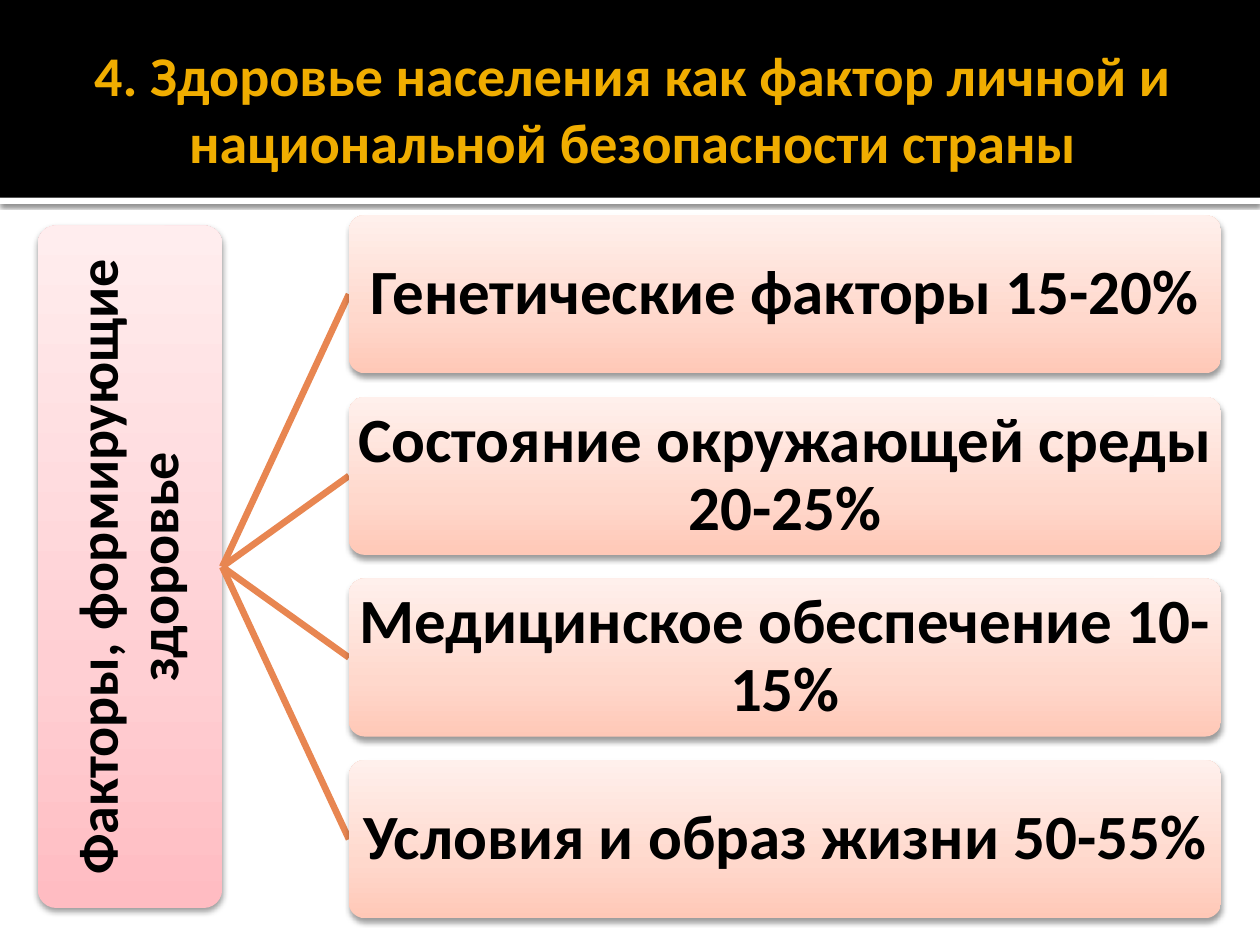
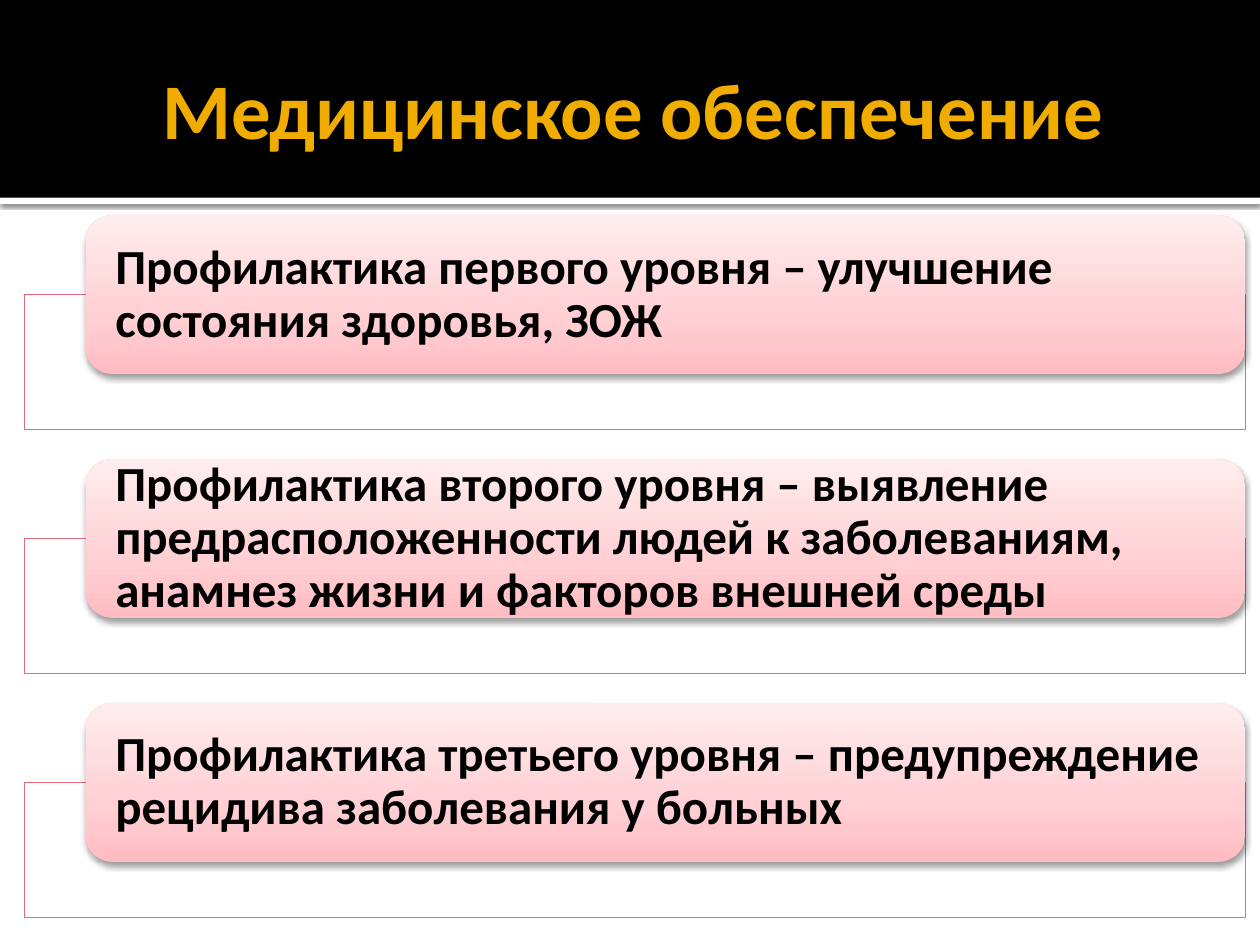
from dataclasses import dataclass

from lxml.etree import SubElement
from pptx import Presentation
from pptx.dml.color import RGBColor
from pptx.enum.shapes import MSO_CONNECTOR, MSO_SHAPE
from pptx.enum.text import MSO_ANCHOR, PP_ALIGN
from pptx.oxml.ns import qn
from pptx.util import Pt


@dataclass(frozen=True)
class Theme:
    font: str = "Calibri"
    band: str = "000000"
    paper: str = "FFFFFF"
    title: str = "F0AD00"
    text: str = "000000"
    line: str = "E88651"
    frame: str = "E66C7D"
    # Gradient stops from bottom to top: (percent, colour)
    pink: tuple = ((0, "FFBCC2"), (35, "FFCFD3"), (100, "FFEDEE"))
    peach: tuple = ((0, "FFC8B7"), (35, "FFD8CC"), (100, "FFF0EC"))
    # Shadows: (opacity percent, blur, distance)
    card_shadow: tuple = (38, 3.5, 2)
    strip_shadow: tuple = (60, 2.5, 0.8)
    title_size: int = 32
    big_title_size: int = 45
    hub_size: int = 32
    factor_size: int = 36
    level_size: int = 28


T = Theme()
WIDTH, HEIGHT = 720, 540
BAND_HEIGHT = 113

FACTORS = (
    "Генетические факторы 15-20%",
    "Состояние окружающей среды 20-25%",
    "Медицинское обеспечение 10-15%",
    "Условия и образ жизни 50-55%",
)
LEVELS = (
    "Профилактика первого уровня – улучшение состояния здоровья, ЗОЖ",
    "Профилактика второго уровня – выявление предрасположенности людей "
    "к заболеваниям, анамнез жизни и факторов внешней среды",
    "Профилактика третьего уровня – предупреждение рецидива заболевания у больных",
)


def rgb(colour):
    return RGBColor.from_string(colour)


# Fills and effects
def add_alpha(colour_node, percent):
    SubElement(colour_node, qn("a:alpha"), val=str(percent * 1000))


def set_gradient(sp, stops):
    sp.fill.gradient()
    sp.fill.gradient_angle = 90
    gs_list = sp._element.spPr.find(".//" + qn("a:gsLst"))
    for gs in list(gs_list):
        gs_list.remove(gs)
    for percent, colour in stops:
        gs = SubElement(gs_list, qn("a:gs"), pos=str(percent * 1000))
        SubElement(gs, qn("a:srgbClr"), val=colour)


def set_shadow(sp, shadow):
    opacity, blur, distance = shadow
    effects = sp._element.spPr.find(qn("a:effectLst"))
    outer = SubElement(effects, qn("a:outerShdw"), blurRad=str(Pt(blur)),
                       dist=str(Pt(distance)), dir="5400000", rotWithShape="0")
    add_alpha(SubElement(outer, qn("a:srgbClr"), val="000000"), opacity)


# Elements
def add_box(s, kind, left, top, width, height):
    sp = s.shapes.add_shape(kind, Pt(left), Pt(top), Pt(width), Pt(height))
    sp.shadow.inherit = False
    sp.line.fill.background()
    return sp


def add_rect(s, left, top, width, height, colour):
    sp = add_box(s, MSO_SHAPE.RECTANGLE, left, top, width, height)
    sp.fill.solid()
    sp.fill.fore_color.rgb = rgb(colour)
    return sp


def write(sp, text, size, colour, align=PP_ALIGN.CENTER, insets=(0, 0, 0, 0), spacing=None):
    tf = sp.text_frame
    tf.word_wrap = True
    tf.vertical_anchor = MSO_ANCHOR.MIDDLE
    tf.margin_left, tf.margin_top, tf.margin_right, tf.margin_bottom = map(Pt, insets)
    p = tf.paragraphs[0]
    p.alignment = align
    p.line_spacing = spacing
    r = p.add_run()
    r.text = text
    r.font.name = T.font
    r.font.size = Pt(size)
    r.font.bold = True
    r.font.color.rgb = rgb(colour)


def add_card(s, left, top, width, height, stops, text, size, corner=None, **style):
    sp = add_box(s, MSO_SHAPE.ROUNDED_RECTANGLE, left, top, width, height)
    if corner is not None:
        sp.adjustments[0] = corner
    set_gradient(sp, stops)
    set_shadow(sp, T.card_shadow)
    write(sp, text, size, T.text, spacing=0.9, **style)
    return sp


def add_frame(s, left, top, width, height):
    sp = add_rect(s, left, top, width, height, T.paper)
    add_alpha(sp._element.spPr.find(".//" + qn("a:srgbClr")), 90)
    sp.line.color.rgb = rgb(T.frame)
    sp.line.width = Pt(0.5)


def add_branch(s, x1, y1, x2, y2):
    c = s.shapes.add_connector(MSO_CONNECTOR.STRAIGHT, Pt(x1), Pt(y1), Pt(x2), Pt(y2))
    c.line.color.rgb = rgb(T.line)
    c.line.width = Pt(3.78)
    SubElement(c._element.spPr, qn("a:effectLst"))


def add_titled_slide(prs, title, size):
    s = prs.slides.add_slide(prs.slide_layouts[6])
    strip = add_rect(s, 0, BAND_HEIGHT, WIDTH, 3.6, T.paper)
    set_shadow(strip, T.strip_shadow)
    add_rect(s, 0, 0, WIDTH, BAND_HEIGHT, T.band)
    box = s.shapes.add_textbox(Pt(36), Pt(12.2), Pt(648), Pt(98.6))
    write(box, title, size, T.title, insets=(7.2, 3.6, 3.6, 3.6))
    return s


# Slides
def build_factors(prs):
    s = add_titled_slide(
        prs, "4. Здоровье населения как фактор личной и национальной безопасности страны",
        T.title_size)
    hub_left, hub_top, hub_width, hub_height = 21.6, 128.9, 105.4, 390
    hub = add_card(s, hub_left, hub_top, hub_width, hub_height, T.pink,
                   "Факторы, формирующие здоровье", T.hub_size, corner=0.1)
    hub.text_frame._txBody.bodyPr.set("vert", "vert270")

    left, top, width, height, step = 199.4, 123, 498.4, 90.3, 103.8
    for i, factor in enumerate(FACTORS):
        y = top + i * step
        add_branch(s, hub_left + hub_width, hub_top + hub_height / 2, left, y + height / 2)
        add_card(s, left, y, width, height, T.peach, factor, T.factor_size, corner=0.1)


def build_levels(prs):
    s = add_titled_slide(prs, "Медицинское обеспечение", T.big_title_size)
    top, step = 123.1, 139.4
    for i, level in enumerate(LEVELS):
        y = top + i * step
        add_frame(s, 14, y + 45.3, 698, 77.2)
        add_card(s, 49, y, 662.4, 90.6, T.pink, level, T.level_size,
                 align=PP_ALIGN.LEFT, insets=(12.5, 0, 12.5, 0))


def main():
    prs = Presentation()
    prs.slide_width, prs.slide_height = Pt(WIDTH), Pt(HEIGHT)
    build_factors(prs)
    build_levels(prs)
    prs.save("out.pptx")


if __name__ == "__main__":
    main()
